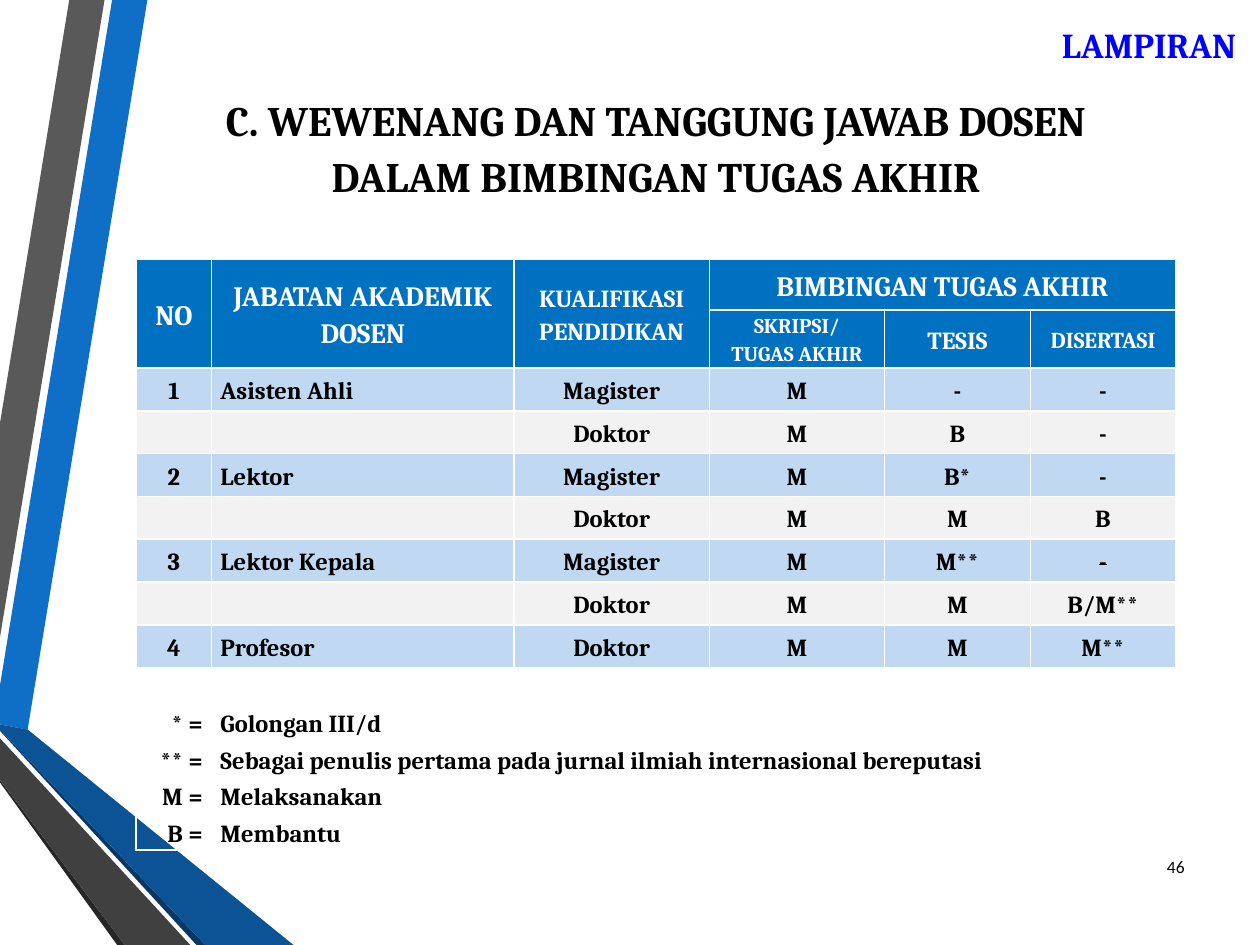
from dataclasses import dataclass

from lxml import etree
from pptx import Presentation
from pptx.dml.color import RGBColor
from pptx.enum.text import MSO_ANCHOR, PP_ALIGN
from pptx.oxml.ns import qn
from pptx.util import Inches, Pt

LEFT, CENTER, RIGHT = PP_ALIGN.LEFT, PP_ALIGN.CENTER, PP_ALIGN.RIGHT
MIDDLE, BOTTOM, TOP = MSO_ANCHOR.MIDDLE, MSO_ANCHOR.BOTTOM, MSO_ANCHOR.TOP


@dataclass(frozen=True)
class Theme:
    heading_font: str = "Cambria"
    number_font: str = "Calibri"
    black: str = "000000"
    white: str = "FFFFFF"
    label: str = "0000FF"
    header: str = "0070C0"
    odd_row: str = "C1D8F2"
    even_row: str = "F2F2F2"
    bright_blue: str = "0F6FC6"
    deep_blue: str = "0B5394"
    blue_edge: str = "083763"
    gray: str = "595959"
    dark_gray: str = "404040"
    gray_edge: str = "262626"
    title_size: int = 24
    label_size: int = 20
    header_size: int = 16
    body_size: int = 14
    narrow_size: int = 13
    small_size: int = 12
    number_size: int = 10


theme = Theme()


def write(para, text, size, color, align, font=theme.heading_font, bold=True):
    """Fill a paragraph; a newline in the text becomes a line break."""
    para.alignment = align
    for index, line in enumerate(text.split("\n")):
        if index:
            para.add_line_break()
        span = para.add_run()
        span.text = line
        span.font.name = font
        span.font.size = Pt(size)
        span.font.bold = bold
        span.font.color.rgb = RGBColor.from_string(color)


def draw_border(cell, widths):
    """Add white cell borders; widths are points for left, right, top, bottom."""
    properties = cell._tc.get_or_add_tcPr()
    for index, (side, width) in enumerate(zip("LRTB", widths)):
        line = etree.Element(qn(f"a:ln{side}"), w=str(Pt(width)))
        fill = etree.SubElement(line, qn("a:solidFill"))
        etree.SubElement(fill, qn("a:srgbClr"), val=theme.white)
        properties.insert(index, line)


deck = Presentation()
deck.slide_width, deck.slide_height = Inches(10), Inches(7.5)
page = deck.slides.add_slide(deck.slide_layouts[6])

# Ribbons along the left edge, in hundredths of an inch
ribbons = [
    (theme.bright_blue, [(0, 544), (0, 575), (22, 579), (117, 0), (89, 0)]),
    (theme.gray, [(83, 0), (55, 0), (0, 336), (0, 506)]),
    (theme.gray_edge, [(0, 619), (0, 621), (93, 750), (99, 750)]),
    (theme.blue_edge, [(0, 579), (0, 580), (156, 750), (163, 750)]),
    (theme.deep_blue, [(0, 579), (163, 750), (233, 750), (22, 579), (0, 575)]),
    (theme.dark_gray, [(0, 619), (99, 750), (151, 750), (0, 586)]),
]
for color, points in ribbons:
    builder = page.shapes.build_freeform(*points[0], scale=Inches(0.01))
    builder.add_line_segments(points[1:], close=True)
    ribbon = builder.convert_to_shape()
    ribbon.shadow.inherit = False
    ribbon.fill.solid()
    ribbon.fill.fore_color.rgb = RGBColor.from_string(color)
    ribbon.line.fill.background()

# Page number
box = page.shapes.add_textbox(Inches(9.03), Inches(6.68), Inches(0.47), Inches(0.4))
box.text_frame.word_wrap = True
box.text_frame.vertical_anchor = MIDDLE
write(box.text_frame.paragraphs[0], "46", theme.number_size, theme.black, RIGHT,
      theme.number_font, False)

# Table grid
column_widths = [0.6, 2.4, 0.61, 0.94, 0.4, 0.99, 0.14, 1.02, 0.12, 1.03]
row_heights = [0.84, 0.45, 0.4, 0.44] + [0.34] * 7 + [0.29] * 5
frame = page.shapes.add_table(len(row_heights), len(column_widths), Inches(1.08),
                              Inches(0.69), Inches(sum(column_widths)),
                              Inches(sum(row_heights)))
table = frame.table
table.first_row = table.horz_banding = False
for column, width in zip(table.columns, column_widths):
    column.width = Inches(width)
for row, height in zip(table.rows, row_heights):
    row.height = Inches(height)

# Column spans of each row: most rows join the narrow columns in pairs
paired = [(0, 0), (1, 1), (2, 3), (4, 5), (6, 7), (8, 9)]
short_legend = [(0, 0), (1, 2), (3, 4), (5, 5), (6, 7), (8, 9)]
spans = {row: paired for row in range(4, 16)}
spans[0] = [(0, 9)]
spans[1] = [(0, 0), (1, 1), (2, 3), (4, 6), (7, 8), (9, 9)]
spans[13] = [(0, 0), (1, 7), (8, 9)]
spans[14] = spans[15] = short_legend
merges = [(row, row, *span) for row in spans for span in spans[row]]
merges += [(2, 3, 0, 0), (2, 3, 1, 1), (2, 3, 2, 3), (2, 2, 4, 9)]
merges += [(3, 3, *span) for span in paired[3:]]
for top, bottom, left, right in merges:
    if (top, left) != (bottom, right):
        table.cell(top, left).merge(table.cell(bottom, right))

# Cell contents, keyed by row and column: text, size, colour, alignment
contents = {
    (0, 0): ("C. WEWENANG DAN TANGGUNG JAWAB DOSEN\nDALAM BIMBINGAN TUGAS AKHIR",
             theme.title_size, theme.black, CENTER),
}
headers = [
    (2, 0, "NO", theme.header_size),
    (2, 1, "JABATAN AKADEMIK DOSEN", theme.header_size),
    (2, 2, "KUALIFIKASI PENDIDIKAN", theme.body_size),
    (2, 4, "BIMBINGAN TUGAS AKHIR", theme.header_size),
    (3, 4, "SKRIPSI/\nTUGAS AKHIR", theme.small_size),
    (3, 6, "TESIS", theme.body_size),
    (3, 8, "DISERTASI", theme.narrow_size),
]
for row, column, text, size in headers:
    contents[row, column] = (text, size, theme.white, CENTER)

authority = [
    ("1", "Asisten Ahli", "Magister", "M", "-", "-"),
    ("", "", "Doktor", "M", "B", "-"),
    ("2", "Lektor", "Magister", "M", "B*", "-"),
    ("", "", "Doktor", "M", "M", "B"),
    ("3", "Lektor Kepala", "Magister", "M", "M**", "-"),
    ("", "", "Doktor", "M", "M", "B/M**"),
    ("4", "Profesor", "Doktor", "M", "M", "M**"),
]
for row, values in enumerate(authority, 4):
    for (column, _), text in zip(paired, values):
        if text:
            align = LEFT if column == 1 else CENTER
            contents[row, column] = (text, theme.body_size, theme.black, align)

legend = [
    ("* =", "Golongan III/d"),
    ("** =", "Sebagai penulis pertama pada jurnal ilmiah internasional bereputasi"),
    ("M =", "Melaksanakan"),
    ("B =", "Membantu"),
]
for row, (symbol, meaning) in enumerate(legend, 12):
    contents[row, 0] = (symbol, theme.body_size, theme.black, RIGHT)
    contents[row, 1] = (meaning, theme.body_size, theme.black, LEFT)

row_fills = {2: theme.header, 3: theme.header}
row_fills.update({row: theme.even_row if row % 2 else theme.odd_row
                  for row in range(4, 11)})

for row in range(len(row_heights)):
    for column in range(len(column_widths)):
        cell = table.cell(row, column)
        cell.margin_left = cell.margin_right = Inches(0.07)
        cell.margin_top = cell.margin_bottom = 0
        cell.vertical_anchor = MIDDLE if row else BOTTOM
        if row in row_fills:
            cell.fill.solid()
            cell.fill.fore_color.rgb = RGBColor.from_string(row_fills[row])
        else:
            cell.fill.background()
        draw_border(cell, (1, 1, 3 if row == 1 else 1, 1 if row else 3))
        para = cell.text_frame.paragraphs[0]
        if (row, column) not in contents:
            etree.SubElement(para._p, qn("a:endParaRPr"), sz="1000")
            continue
        text, size, color, align = contents[row, column]
        lines = text.split("\n") if row == 0 else [text]
        for index, line in enumerate(lines):
            para = cell.text_frame.add_paragraph() if index else para
            para.line_spacing = 1.15
            write(para, line, size, color, align)

struck = table.cell(8, 8).text_frame.paragraphs[0].runs[0]
struck.font._element.set("strike", "sngStrike")

# Corner label
box = page.shapes.add_textbox(Inches(2.58), Inches(0.14), Inches(7.33), Inches(0.44))
box.text_frame.word_wrap = True
box.text_frame.vertical_anchor = TOP
write(box.text_frame.paragraphs[0], "LAMPIRAN", theme.label_size, theme.label, RIGHT)

deck.save("out.pptx")
